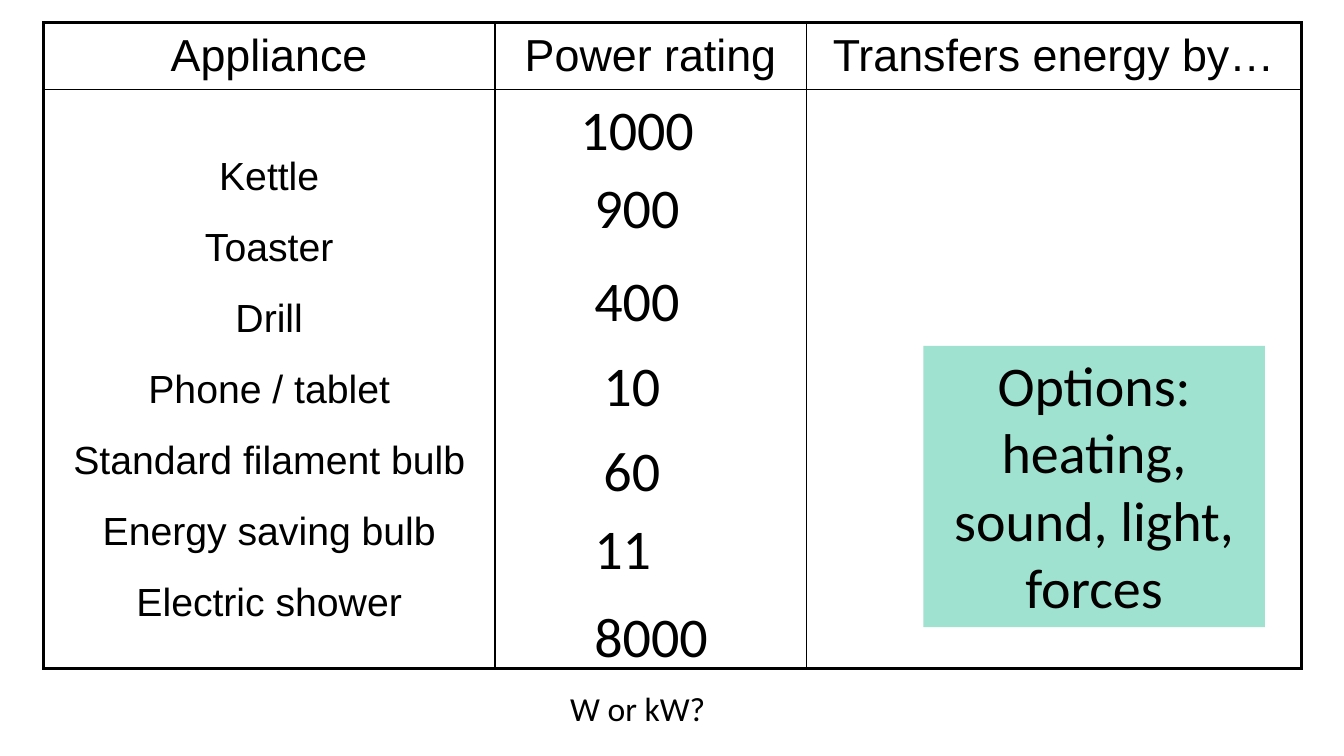
import pptx
import pptx.util
import pptx.dml.color
import pptx.enum.shapes
import pptx.enum.text
import pptx.oxml
import pptx.oxml.ns

Pt = pptx.util.Pt
Align = pptx.enum.text.PP_ALIGN
Anchor = pptx.enum.text.MSO_ANCHOR
Fit = pptx.enum.text.MSO_AUTO_SIZE

BLACK, MINT = "000000", "9EE2CF"
heads = ["Appliance", "Power rating", "Transfers energy by…"]
goods = ["Kettle", "Toaster", "Drill", "Phone / tablet",
         "Standard filament bulb", "Energy saving bulb", "Electric shower"]
powers = [("1000", 407.5, 64), ("900", 417.5, 119.5), ("400", 417.5, 186),
          ("10", 424, 247), ("60", 424, 307.5), ("11", 417.5, 363.5),
          ("8000", 417.5, 426)]
hint = "Options: heating, sound, light, forces"
ask = "W or kW?"
left, top = 31, 16
widths = [322.5, 222.5, 353.5]
heights = [48, 413.5]
thin, thick = 1, 2.25
digit, margin, tall = 20.3, 14.4, 55.5


def color(code):
    return pptx.dml.color.RGBColor.from_string(code)


def write(frame, *lines, size=40, font="Calibri", align=Align.CENTER,
          before=0, spacing=None):
    for num, line in enumerate(lines):
        para = frame.add_paragraph() if num else frame.paragraphs[0]
        para.alignment = align
        para.space_before = Pt(before)
        if spacing:
            para.line_spacing = spacing
        run = para.add_run()
        run.text = line
        run.font.size = Pt(size)
        run.font.name = font
        run.font.color.rgb = color(BLACK)


def border(cell, sides):
    props = cell._tc.get_or_add_tcPr()
    for num, (side, width) in enumerate(sides):
        props.insert(num, pptx.oxml.parse_xml(
            f'<a:ln{side} {pptx.oxml.ns.nsdecls("a")} w="{int(Pt(width))}">'
            f'<a:solidFill><a:srgbClr val="{BLACK}"/></a:solidFill></a:ln{side}>'))


def label(text, x, y, w, h, wrap, **form):
    box = slide.shapes.add_textbox(Pt(x), Pt(y), Pt(w), Pt(h))
    box.text_frame.word_wrap = wrap
    box.text_frame.auto_size = Fit.SHAPE_TO_FIT_TEXT
    write(box.text_frame, text, **form)


deck = pptx.Presentation()
deck.slide_width, deck.slide_height = Pt(960), Pt(540)
slide = deck.slides.add_slide(deck.slide_layouts[6])

grid = slide.shapes.add_table(2, 3, Pt(left), Pt(top),
                              Pt(sum(widths)), Pt(sum(heights))).table
grid.first_row = grid.horz_banding = False
for col, width in zip(grid.columns, widths):
    col.width = Pt(width)
for row, height in zip(grid.rows, heights):
    row.height = Pt(height)
for r in range(2):
    for c in range(3):
        cell = grid.cell(r, c)
        cell.fill.background()
        cell.vertical_anchor = Anchor.MIDDLE
        edges = [("L", c == 0), ("R", c == 2), ("T", r == 0), ("B", r == 1)]
        border(cell, [(side, thick if outer else thin) for side, outer in edges])
for c, head in enumerate(heads):
    write(grid.cell(0, c).text_frame, head, size=32, font="Arial", before=4)
write(grid.cell(1, 0).text_frame, *goods, size=28, font="Arial",
      before=4, spacing=1.5)

card = slide.shapes.add_shape(pptx.enum.shapes.MSO_SHAPE.RECTANGLE,
                              Pt(659.5), Pt(247), Pt(244), Pt(201))
card.shadow.inherit = False
card.fill.solid()
card.fill.fore_color.rgb = color(MINT)
card.line.fill.background()
card.text_frame.word_wrap = True
card.text_frame.vertical_anchor = Anchor.TOP
card.text_frame.auto_size = Fit.SHAPE_TO_FIT_TEXT
write(card.text_frame, hint)

label(ask, 364.5, 488, 182, 36, True, size=24)
for power, x, y in powers:
    label(power, x, y, len(power) * digit + margin, tall, False, align=Align.LEFT)

deck.save("out.pptx")
